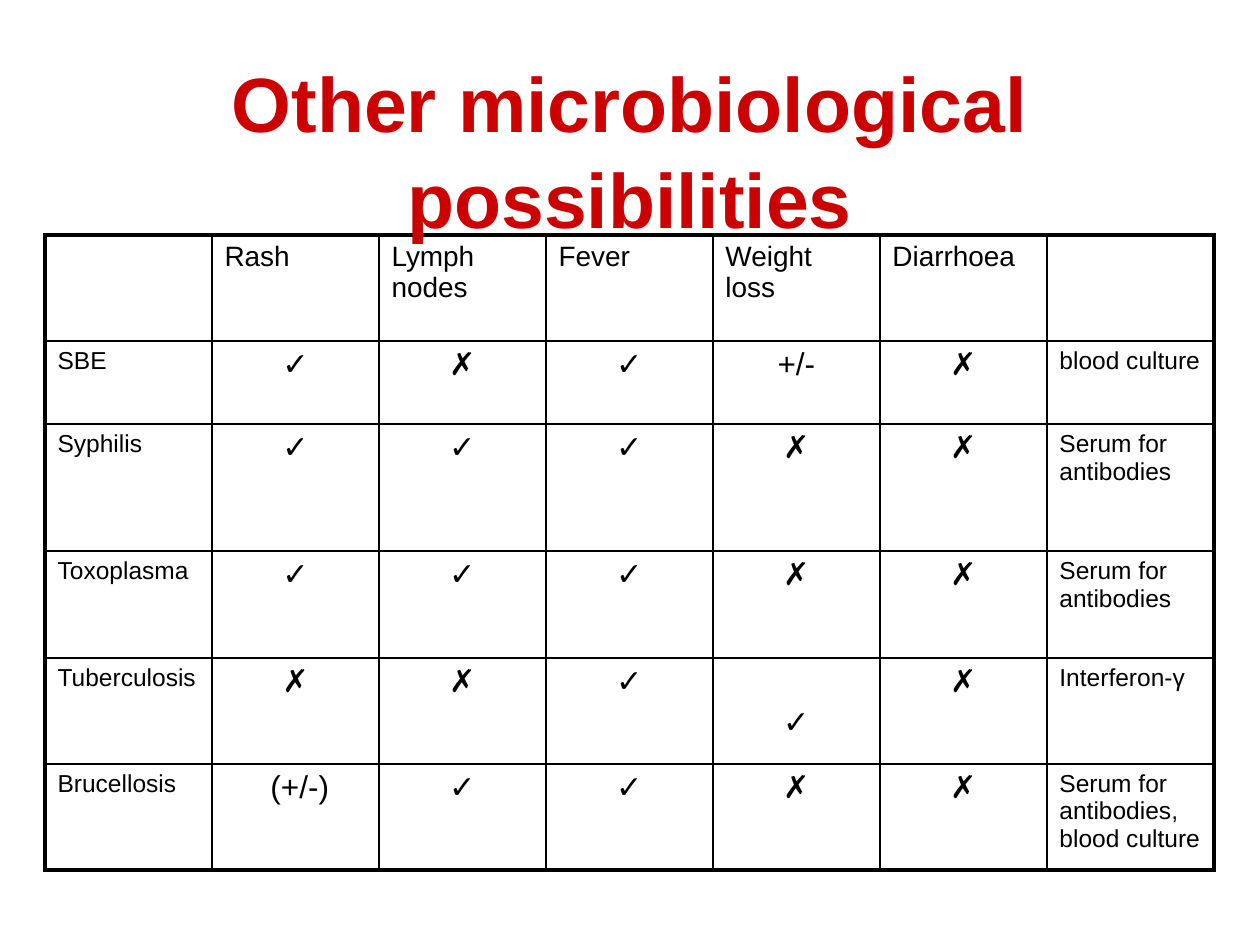
from lxml.etree import SubElement
from pptx import Presentation
from pptx.dml.color import RGBColor
from pptx.enum.text import PP_ALIGN
from pptx.oxml.ns import qn
from pptx.util import Pt

PX = 914400 // 126
BLACK = RGBColor(0x00, 0x00, 0x00)
RED = RGBColor(0xCC, 0x00, 0x00)
FONT = "Arial"
THIN, THICK = Pt(1), Pt(2.25)

HEADERS = ["", "Rash", "Lymph nodes", "Fever", "Weight loss", "Diarrhoea", ""]
INFECTIONS = [
    ["SBE", "✓", "✗", "✓", "+/-", "✗", "blood culture"],
    ["Syphilis", "✓", "✓", "✓", "✗", "✗", "Serum for antibodies"],
    ["Toxoplasma", "✓", "✓", "✓", "✗", "✗", "Serum for antibodies"],
    ["Tuberculosis", "✗", "✗", "✓", "✓", "✗", "Interferon-γ"],
    ["Brucellosis", " (+/-)", "✓", "✓", "✗", "✗",
     "Serum for antibodies, blood culture"],
]
ROWS = [HEADERS] + INFECTIONS
ROW_HEIGHTS = [106, 83, 127, 107, 106, 106]
COLUMN_WIDTH = 167
LOWERED_CELL = (4, 4)  # weight loss in tuberculosis sits one line down


def style_text(paragraph, size, color, alignment):
    paragraph.alignment = alignment
    paragraph.font.name = FONT
    paragraph.font.size = Pt(size)
    paragraph.font.color.rgb = color


def set_border(cell, side, width):
    line = SubElement(cell._tc.get_or_add_tcPr(), qn(f"a:ln{side}"), w=str(width))
    fill = SubElement(line, qn("a:solidFill"))
    SubElement(fill, qn("a:srgbClr"), val=str(BLACK))


presentation = Presentation()
presentation.slide_width = 1260 * PX
presentation.slide_height = 945 * PX
slide = presentation.slides.add_slide(presentation.slide_layouts[6])

# Table of infections and findings
last_row, last_column = len(ROWS) - 1, len(HEADERS) - 1
frame = slide.shapes.add_table(
    len(ROWS), len(HEADERS), 45 * PX, 235 * PX,
    COLUMN_WIDTH * len(HEADERS) * PX, sum(ROW_HEIGHTS) * PX)
table = frame.table
table.first_row = False
table.horz_banding = False
for column in table.columns:
    column.width = COLUMN_WIDTH * PX

for row_index, (texts, height) in enumerate(zip(ROWS, ROW_HEIGHTS)):
    table.rows[row_index].height = height * PX
    for column_index, text in enumerate(texts):
        cell = table.cell(row_index, column_index)
        cell.text = text
        outer_column = column_index in (0, last_column)
        if row_index == 0:
            size, alignment = 16, PP_ALIGN.LEFT
        elif outer_column:
            size, alignment = 14, PP_ALIGN.LEFT
        else:
            size, alignment = 18, PP_ALIGN.CENTER
        style_text(cell.text_frame.paragraphs[0], size, BLACK, alignment)
        if (row_index, column_index) == LOWERED_CELL:
            cell.margin_top = 47 * PX

        # Thick outer frame, thin inner grid; borders precede the fill
        set_border(cell, "L", THICK if column_index == 0 else THIN)
        set_border(cell, "R", THICK if column_index == last_column else THIN)
        set_border(cell, "T", THICK if row_index == 0 else THIN)
        set_border(cell, "B", THICK if row_index == last_row else THIN)
        cell.fill.background()

# Title
title = slide.shapes.add_textbox(0, 46 * PX, 1260 * PX, 199 * PX)
title.text_frame.word_wrap = True
paragraph = title.text_frame.paragraphs[0]
paragraph.text = "Other microbiological possibilities"
paragraph.line_spacing = 1.04
style_text(paragraph, 44, RED, PP_ALIGN.CENTER)
paragraph.font.bold = True

presentation.save("out.pptx")
